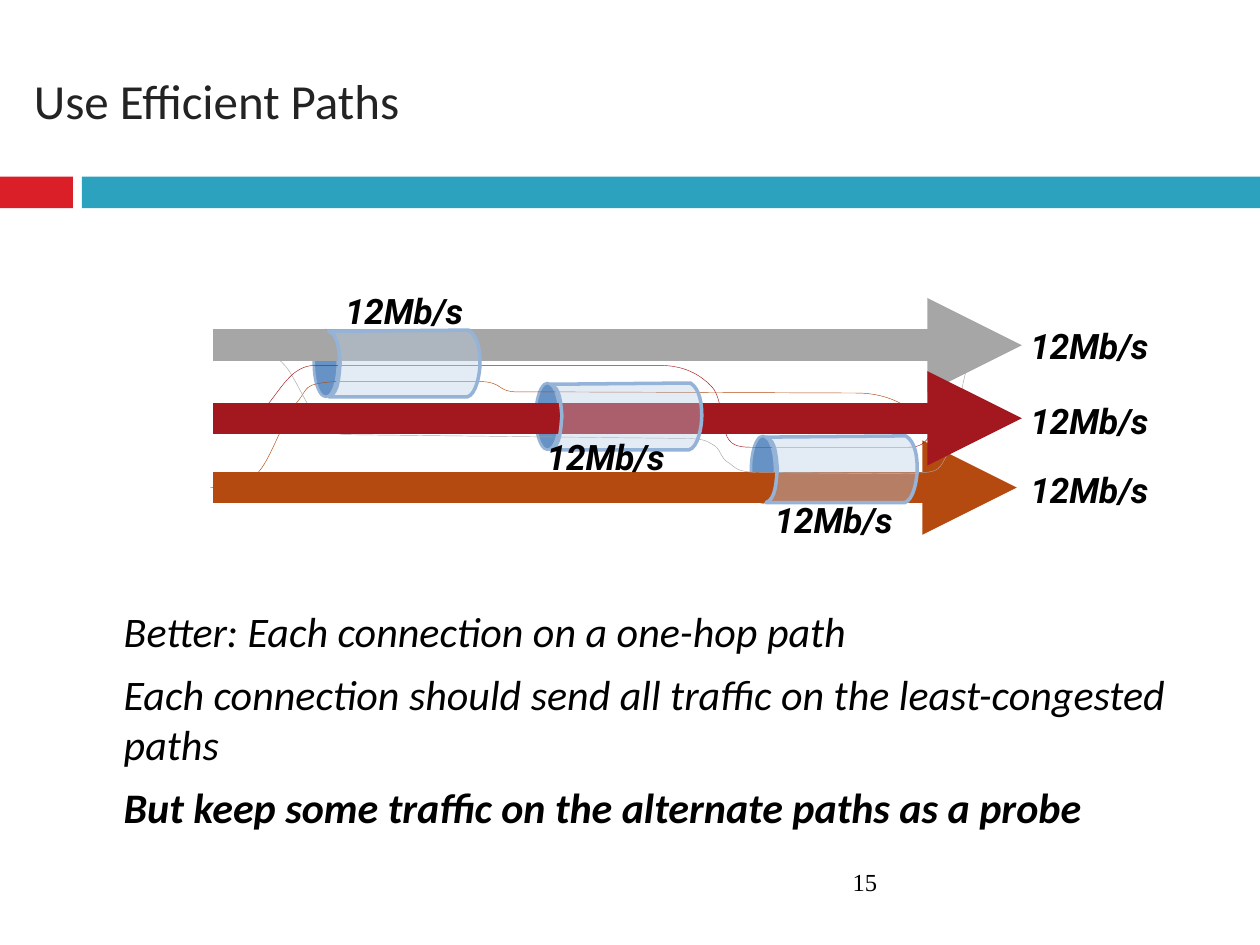
from lxml.etree import SubElement
from pptx import Presentation
from pptx.dml.color import RGBColor
from pptx.enum.shapes import MSO_CONNECTOR, MSO_SHAPE
from pptx.enum.text import MSO_ANCHOR, MSO_AUTO_SIZE, PP_ALIGN
from pptx.oxml.ns import qn
from pptx.util import Cm, Pt

BLACK = RGBColor(0x00, 0x00, 0x00)
CHARCOAL = RGBColor(0x23, 0x23, 0x23)
RED = RGBColor(0xDA, 0x1F, 0x28)
TEAL = RGBColor(0x2D, 0xA2, 0xBF)
ORANGE = RGBColor(0xB5, 0x4A, 0x10)
GREY = RGBColor(0xA6, 0xA6, 0xA6)
CRIMSON = RGBColor(0xA3, 0x17, 0x1E)
PIPE_END = RGBColor(0x67, 0x92, 0xC5)
PIPE_BODY = RGBColor(0xB9, 0xCD, 0xE5)
PIPE_EDGE = RGBColor(0x95, 0xB3, 0xD7)

GRID = Cm(2.54) // 100
RATE = "12Mb/s"

ORANGE_ROUTE = [
    (17, 187), (39, 186), (46, 184, 50, 182, 58, 171),
    (66, 160, 76, 131, 86, 119), (95, 108, 90, 105, 114, 103), (227, 103),
    (233, 103, 240, 102, 248, 108), (254, 112, 262, 111, 268, 111), (530, 112),
    (552, 112, 569, 120, 582, 133), (594, 146, 606, 171, 613, 178),
    (620, 184, 625, 188, 635, 188), (649, 188),
]
GREY_ROUTE = [
    (30, 75), (54, 75), (62, 78, 68, 81, 77, 91),
    (85, 101, 94, 124, 103, 133), (111, 143, 117, 145, 127, 145), (394, 148),
    (408, 148, 411, 150, 416, 153), (422, 156, 422, 164, 428, 167),
    (434, 171, 433, 174, 450, 175), (572, 176), (593, 174, 594, 176, 601, 162),
    (609, 148, 612, 106, 618, 91), (623, 76, 629, 77, 635, 74), (651, 75),
]
CRIMSON_ROUTE = [
    (22, 133), (48, 132), (53, 130, 54, 130, 60, 124),
    (66, 118, 76, 101, 85, 95), (94, 89, 98, 90, 113, 90), (373, 90),
    (393, 90, 405, 97, 414, 106), (423, 114, 422, 135, 426, 144),
    (429, 153, 435, 155, 446, 155), (571, 155), (581, 155, 585, 151, 588, 145),
    (592, 140, 596, 134, 601, 133), (606, 133, 615, 133, 622, 133),
]
PIPE_OUTLINE = [
    (0, 53), (110, 53), (117, 51, 120, 35, 120, 26), (120, 18, 119, 5, 111, 0),
    (0, 1), (8, 4, 8, 17, 9, 26), (8, 36, 8, 50, 0, 53),
]

FLOWS = [
    (187, 807, ORANGE, ORANGE_ROUTE),
    (74, 811, GREY, GREY_ROUTE),
    (132, 811, CRIMSON, CRIMSON_ROUTE),
]
PIPES = [(111, 62), (287, 104), (458, 146)]
LABELS = [(658, 53), (658, 112), (658, 167), (114, 25), (274, 141), (455, 191)]


def write(para, text, font="Calibri", size=24, color=BLACK, bold=False, italic=False):
    """Add a formatted span of text to a paragraph."""
    span = para.add_run()
    span.text = text
    span.font.name = font
    span.font.size = Pt(size)
    span.font.color.rgb = color
    span.font.bold = bold
    span.font.italic = italic


def add_text(page, text, left, top, width, height, **style):
    """Add a text box holding one formatted line."""
    box = page.shapes.add_textbox(left, top, width, height)
    box.text_frame.word_wrap = True
    write(box.text_frame.paragraphs[0], text, **style)


def paint(shape, fill=None, line=None, weight=1):
    """Set the fill and outline of a shape and drop its shadow."""
    shape.shadow.inherit = False
    if fill is None:
        shape.fill.background()
    else:
        shape.fill.solid()
        shape.fill.fore_color.rgb = fill
    if line is None:
        shape.line.fill.background()
    else:
        shape.line.color.rgb = line
        shape.line.width = Pt(weight)


def add_curve(page, left, top, steps, close=False):
    """Draw an outline whose steps are line ends or cubic curves in grid units."""
    points = [step[i:i + 2] for step in steps[1:] for i in range(0, len(step), 2)]
    builder = page.shapes.build_freeform(*steps[0], scale=GRID)
    builder.add_line_segments(points, close=close)
    shape = builder.convert_to_shape(left, top)
    segments = iter(list(shape._element.iter(qn("a:lnTo"))))
    for step in steps[1:]:
        segment = next(segments)
        if len(step) == 6:
            segment.tag = qn("a:cubicBezTo")
            for _ in range(2):
                extra = next(segments)
                segment.append(extra[0])
                extra.getparent().remove(extra)
    return shape


def add_flow(page, left, top, level, tip, color, route):
    """Draw a thick flow arrow and its thin alternate route."""
    y = top + level * GRID
    arrow = page.shapes.add_connector(
        MSO_CONNECTOR.STRAIGHT, left + 19 * GRID, y, left + (tip - 150) * GRID, y)
    arrow.line.color.rgb = color
    arrow.line.width = Pt(18)
    SubElement(arrow.line._get_or_add_ln(), qn("a:tailEnd"), type="triangle")
    SubElement(arrow._element.spPr, qn("a:effectLst"))
    paint(add_curve(page, left, top, route), line=color, weight=0.25)


def add_pipe_end(page, left, top):
    """Draw the open end of a pipe."""
    end = page.shapes.add_shape(
        MSO_SHAPE.OVAL, left - 12 * GRID, top, 19 * GRID, 53 * GRID)
    paint(end, PIPE_END, PIPE_EDGE, 1.5)


def add_pipe_body(page, left, top):
    """Draw the translucent body of a pipe."""
    body = add_curve(page, left, top, PIPE_OUTLINE, close=True)
    paint(body, PIPE_BODY, PIPE_EDGE, 2)
    tint = body._element.spPr.find(qn("a:solidFill"))[0]
    SubElement(tint, qn("a:alpha"), val="40000")


def add_diagram(page, left, top):
    """Draw the three flows, their pipes and the rate labels."""
    pipe_spots = [(left + x * GRID, top + y * GRID) for x, y in PIPES]
    for spot in pipe_spots:
        add_pipe_end(page, *spot)
    for flow in FLOWS:
        add_flow(page, left, top, *flow)
    for spot in pipe_spots:
        add_pipe_body(page, *spot)
    for x, y in LABELS:
        add_text(page, RATE, left + x * GRID, top + y * GRID, Cm(3.25), Cm(1.12),
                 font="Roboto", size=20, bold=True, italic=True)


def add_band(page, left, top, width, height):
    """Draw the two-colour band under the title."""
    for offset, span_width, color in [
        (0, Cm(1.47), RED),
        (Cm(1.65), width - Cm(1.65), TEAL),
    ]:
        bar = page.shapes.add_shape(
            MSO_SHAPE.RECTANGLE, left + offset, top, span_width, height)
        paint(bar, color)


def place(box, left, top, width, height, anchor):
    """Position a placeholder and return its text frame."""
    box.left, box.top, box.width, box.height = left, top, width, height
    frame = box.text_frame
    frame.auto_size = MSO_AUTO_SIZE.NONE
    frame.vertical_anchor = anchor
    return frame


def add_title(page, left, top, width, height):
    """Fill the title placeholder."""
    frame = place(page.shapes.title, left, top, width, height, MSO_ANCHOR.MIDDLE)
    para = frame.paragraphs[0]
    para.alignment = PP_ALIGN.LEFT
    write(para, "Use Efficient Paths", size=28, color=CHARCOAL)


def add_body(page, left, top, width, height):
    """Fill the body placeholder with unbulleted statements."""
    frame = place(page.placeholders[1], left, top, width, height, MSO_ANCHOR.BOTTOM)
    statements = [
        ("Better: Each connection on a one-hop path", False),
        ("Each connection should send all traffic on the least-congested paths", False),
        ("But keep some traffic on the alternate paths as a probe", True),
    ]
    for index, (text, bold) in enumerate(statements):
        para = frame.add_paragraph() if index else frame.paragraphs[0]
        para.space_before = Pt(7)
        properties = para._p.get_or_add_pPr()
        properties.set("marL", "0")
        properties.set("indent", "0")
        SubElement(properties, qn("a:buNone"))
        write(para, text, bold=bold, italic=True)


def main():
    """Build the slide and save the deck."""
    deck = Presentation()
    deck.slide_width, deck.slide_height = Cm(25.4), Cm(19.05)
    page = deck.slides.add_slide(deck.slide_layouts[1])
    add_band(page, 0, Cm(3.56), deck.slide_width, Cm(0.64))
    add_title(page, Cm(0.43), Cm(0.64), Cm(24.56), Cm(2.74))
    add_text(page, "15", Cm(16.94), Cm(17.35), Cm(7.42), Cm(1.02),
             font="Times New Roman", size=14)
    add_body(page, Cm(2.24), Cm(4.62), Cm(22.73), Cm(12.27))
    add_diagram(page, Cm(3.81), Cm(5.08))
    deck.save("out.pptx")


if __name__ == "__main__":
    main()
